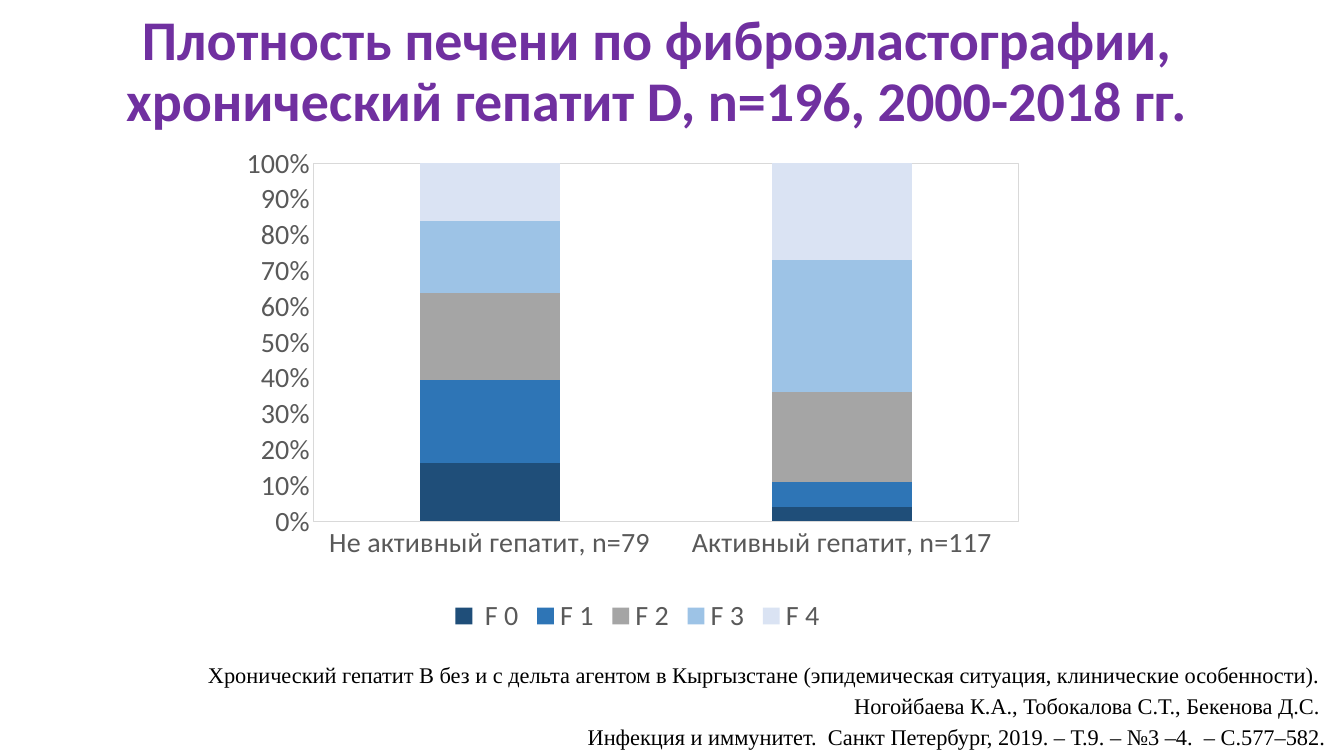
from lxml.etree import SubElement
from pptx import Presentation
from pptx.chart.data import CategoryChartData
from pptx.dml.color import RGBColor
from pptx.enum.chart import XL_CHART_TYPE as ChartType, XL_LEGEND_POSITION as LegendPosition
from pptx.enum.chart import XL_TICK_MARK as TickMark
from pptx.enum.text import MSO_ANCHOR as Anchor, PP_ALIGN as Align
from pptx.oxml import parse_xml
from pptx.oxml.ns import nsdecls, qn
from pptx.util import Cm, Pt

TITLE = [
    "Плотность печени по фиброэластографии, ",
    "хронический гепатит D, n=196, 2000-2018 гг. ",
]
CITATION = [
    "Хронический гепатит В без и с дельта агентом в Кыргызстане (эпидемическая ситуация, клинические особенности). ",
    "Ногойбаева К.А., Тобокалова С.Т., Бекенова Д.С. ",
    "Инфекция и иммунитет.  Санкт Петербург, 2019. – Т.9. – №3 –4.  – С.577–582.",
]
GROUPS = ["Не активный гепатит, n=79", "Активный гепатит, n=117"]
STAGES = {
    " F 0": (16, 4),
    "F 1": (23, 7),
    "F 2": (24, 25),
    "F 3": (20, 37),
    "F 4": (16, 27),
}
COLORS = {
    "title": "7030A0",
    "citation": "000000",
    "label": "595959",
    "line": "D9D9D9",
    " F 0": "1F4E79",
    "F 1": "2E75B6",
    "F 2": "A5A5A5",
    "F 3": "9DC3E6",
    "F 4": "DAE3F3",
}
PLOT = {"x": 0.1, "y": 0.03, "w": 0.87, "h": 0.73}


def color(name):
    return RGBColor.from_string(COLORS[name])


def set_font(font, name, size, shade, bold=False):
    font.name, font.size, font.bold = name, Pt(size), bold
    font.color.rgb = color(shade)


def add_text(page, box_place, paragraphs, align, spacing, anchor, *font):
    box = page.shapes.add_textbox(*map(Cm, box_place))
    frame = box.text_frame
    frame.word_wrap = True
    frame.vertical_anchor = anchor
    for index, text in enumerate(paragraphs):
        para = frame.paragraphs[0] if index == 0 else frame.add_paragraph()
        para.text = text
        para.alignment = align
        para.line_spacing = spacing
        set_font(para.font, *font)


def frame_plot(chart):
    area = chart.element.chart.plotArea
    for old in area.findall(qn("c:layout")):
        area.remove(old)
    layout = parse_xml(f"<c:layout {nsdecls('c')}/>")
    manual = SubElement(layout, qn("c:manualLayout"))
    settings = {"layoutTarget": "inner", "xMode": "edge", "yMode": "edge", **PLOT}
    for tag, value in settings.items():
        SubElement(manual, qn(f"c:{tag}")).set("val", str(value))
    area.insert(0, layout)
    area.append(parse_xml(
        f'<c:spPr {nsdecls("c", "a")}><a:noFill/><a:ln w="9525"><a:solidFill>'
        f'<a:srgbClr val="{COLORS["line"]}"/></a:solidFill></a:ln></c:spPr>'))


def add_stage_chart(page):
    data = CategoryChartData()
    data.categories = GROUPS
    for stage, shares in STAGES.items():
        data.add_series(stage, shares)
    place = map(Cm, (5.87, 3.68, 20.4, 12.42))
    chart = page.shapes.add_chart(ChartType.COLUMN_STACKED_100, *place, data).chart
    set_font(chart.font, "Calibri", 20, "label")
    chart.has_title = False
    chart.has_legend = True
    chart.legend.position = LegendPosition.BOTTOM
    chart.legend.include_in_layout = False
    set_font(chart.legend.font, "Calibri", 20, "label")

    for axis in (chart.category_axis, chart.value_axis):
        axis.major_tick_mark = axis.minor_tick_mark = TickMark.NONE
        axis.has_major_gridlines = False
        set_font(axis.tick_labels.font, "Calibri", 20, "label")
    line = chart.category_axis.format.line
    line.color.rgb = color("line")
    line.width = Pt(0.75)
    values = chart.value_axis
    values.format.line.fill.background()
    values.minimum_scale, values.maximum_scale, values.major_unit = 0, 1, 0.1
    values.tick_labels.number_format = "0%"
    values.tick_labels.number_format_is_linked = False

    plot = chart.plots[0]
    plot.gap_width, plot.overlap = 150, 100
    plot.vary_by_categories = False
    for series in plot.series:
        series.format.fill.solid()
        series.format.fill.fore_color.rgb = color(series.name)
    frame_plot(chart)


def main():
    """Build the liver stiffness slide."""
    deck = Presentation()
    deck.slide_width, deck.slide_height = Cm(33.87), Cm(19.05)
    page = deck.slides.add_slide(deck.slide_layouts[6])
    add_text(page, (-0.23, 0, 33.87, 3.68), ["\v".join(TITLE)], Align.CENTER, 0.9,
             Anchor.MIDDLE, "Calibri", 40, "title", True)
    add_text(page, (0.71, 16.43, 32.94, 2.62), CITATION, Align.RIGHT, 1.15,
             Anchor.TOP, "Times New Roman", 16, "citation")
    add_stage_chart(page)
    deck.save("out.pptx")


if __name__ == "__main__":
    main()
